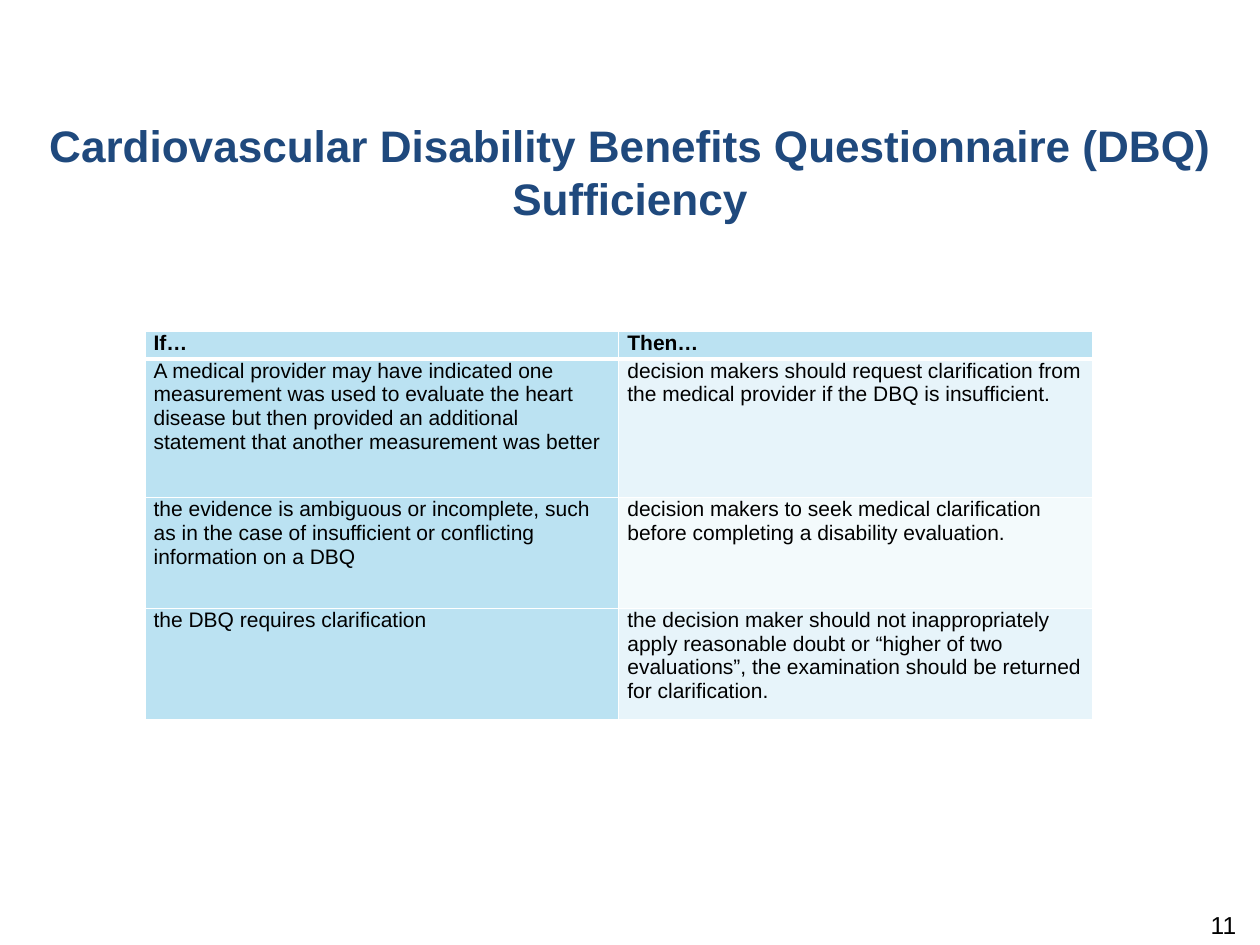
from typing import NamedTuple

from lxml import etree
from pptx import Presentation
from pptx.dml.color import RGBColor
from pptx.enum import text as tx
from pptx.oxml import ns
from pptx.util import Pt

INK = {"navy": "1F497D", "black": "000000", "white": "FFFFFF",
       "sky": "BBE2F2", "pale": "E7F4FA", "mist": "F3FAFC"}


class Box(NamedTuple):
    left: float
    top: float
    width: float
    height: float


class Row(NamedTuple):
    height: float
    cause: str
    action: str
    tint: str
    top: float = 1
    base: float = 1
    bold: bool = False


TITLE = Box(0, 62.64, 720, 85.68)
TABLE = Box(82.8, 189.36, 541.44, 221.76)
NUMBER = Box(545.76, 519.84, 167.76, 28.8)

ROWS = [
    Row(15.84, "If…", "Then…", "sky", base=3, bold=True),
    Row(79.2, "A medical provider may have indicated one measurement was used "
        "to evaluate the heart disease but then provided an additional "
        "statement that another measurement was better",
        "decision makers should request clarification from the medical "
        "provider if the DBQ is insufficient.", "pale", top=3),
    Row(63.36, "the evidence is ambiguous or incomplete, such as in the case "
        "of insufficient or conflicting information on a DBQ",
        "decision makers to seek medical clarification before completing a "
        "disability evaluation.", "mist"),
    Row(63.36, "the DBQ requires clarification",
        "the decision maker should not inappropriately apply reasonable doubt "
        "or “higher of two evaluations”, the examination should be returned "
        "for clarification.", "pale"),
]


def apply(item, **values) -> None:
    for name, value in values.items():
        setattr(item, name, value)


def place(shape, box: Box) -> None:
    apply(shape, **{name: Pt(size) for name, size in box._asdict().items()})


def write(frame, words: str, size: float, ink: str, align,
          bold: bool = False, pitch: float | None = None) -> None:
    frame.text = words
    para = frame.paragraphs[0]
    apply(para, alignment=align, space_before=Pt(0))
    if pitch:
        para.line_spacing = Pt(pitch)
    font = para.runs[0].font
    apply(font, name="Arial", size=Pt(size), bold=bold)
    font.color.rgb = RGBColor.from_string(INK[ink])


def edge(cell, widths: dict[str, float]) -> None:
    """Draw white cell borders; schema order is L, R, T, B, then the fill."""
    props = cell._tc.get_or_add_tcPr()
    for spot, (side, width) in enumerate(widths.items()):
        line = etree.Element(ns.qn(f"a:ln{side}"), w=str(Pt(width)))
        fill = etree.SubElement(line, ns.qn("a:solidFill"))
        etree.SubElement(fill, ns.qn("a:srgbClr"), val=INK["white"])
        props.insert(spot, line)


def fill_cell(cell, words: str, tint: str, row: Row) -> None:
    apply(cell, margin_left=Pt(5.04), margin_right=Pt(5.04),
          margin_top=0, margin_bottom=0)
    write(cell.text_frame, words, 12, "black", tx.PP_ALIGN.LEFT,
          row.bold, 13.5)
    cell.fill.solid()
    cell.fill.fore_color.rgb = RGBColor.from_string(INK[tint])
    edge(cell, {"L": 1, "R": 1, "T": row.top, "B": row.base})


def add_grid(slide, rows: list[Row]) -> None:
    area = [Pt(size) for size in TABLE]
    table = slide.shapes.add_table(len(rows), 2, *area).table
    apply(table, first_row=False, horz_banding=False)
    for col in table.columns:
        col.width = Pt(TABLE.width / 2)
    for line, row in zip(table.rows, rows):
        line.height = Pt(row.height)
        fill_cell(line.cells[0], row.cause, "sky", row)
        fill_cell(line.cells[1], row.action, row.tint, row)


def main() -> None:
    deck = Presentation()
    apply(deck, slide_width=Pt(720), slide_height=Pt(540))
    slide = deck.slides.add_slide(deck.slide_layouts[5])

    title = slide.shapes.title
    place(title, TITLE)
    apply(title.text_frame, vertical_anchor=tx.MSO_ANCHOR.TOP,
          margin_top=Pt(5), word_wrap=True, auto_size=tx.MSO_AUTO_SIZE.NONE)
    write(title.text_frame,
          "Cardiovascular Disability Benefits Questionnaire (DBQ) Sufficiency",
          25.2, "navy", tx.PP_ALIGN.CENTER, True, 30.24)

    add_grid(slide, ROWS)

    number = slide.shapes.add_textbox(*[Pt(size) for size in NUMBER])
    apply(number.text_frame, word_wrap=True, margin_top=0)
    write(number.text_frame, "11", 14, "black", tx.PP_ALIGN.RIGHT)

    deck.save("out.pptx")


if __name__ == "__main__":
    main()
